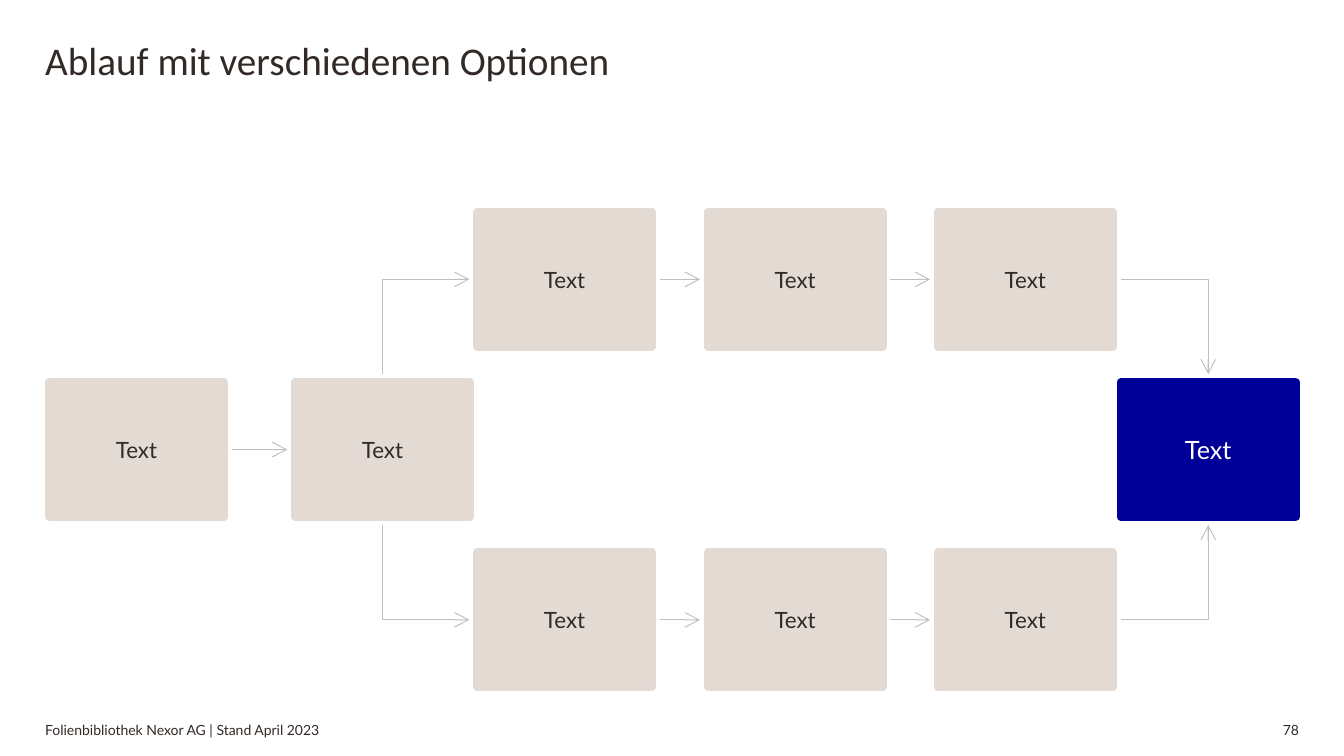
from pptx import Presentation
from pptx import util as u
from pptx.dml.color import RGBColor
from pptx.enum import shapes, text
from pptx.oxml.ns import qn
from lxml import etree

# Content
TITLE = "Ablauf mit verschiedenen Optionen"
FOOTER = "Folienbibliothek Nexor AG | Stand April 2023"
PAGE = "78"
UPPER, MIDDLE, LOWER = 0, 1, 2
STEPS = {  # name: (label, column, row)
    "start": ("Text", 0, MIDDLE),
    "fork": ("Text", 1, MIDDLE),
    "goal": ("Text", 5, MIDDLE),
    "a1": ("Text", 2, UPPER),
    "a2": ("Text", 3, UPPER),
    "a3": ("Text", 4, UPPER),
    "b1": ("Text", 2, LOWER),
    "b2": ("Text", 3, LOWER),
    "b3": ("Text", 4, LOWER),
}
FLOWS = [("start", "fork"), ("fork", "a1"), ("a1", "a2"), ("a2", "a3"), ("a3", "goal"),
         ("fork", "b1"), ("b1", "b2"), ("b2", "b3"), ("b3", "goal")]

DARK = RGBColor(0x32, 0x2A, 0x26)
SAND = RGBColor(0xE4, 0xDA, 0xD4)
BLUE = RGBColor(0x00, 0x00, 0x99)
GREY = RGBColor(0xBF, 0xBF, 0xBF)
WHITE = RGBColor(0xFF, 0xFF, 0xFF)

# Layout in cm
BOX_W, BOX_H = 4.4, 3.4
COLUMN_X = [1.24, 7.44, 12.03, 17.84, 23.64, 28.25]
ROW_Y, ROW_STEP = 5.34, 4.29
GAP = 0.2  # space between an arrow and its box

prs = Presentation()
prs.slide_width, prs.slide_height = u.Cm(33.87), u.Cm(19.05)
s = prs.slides.add_slide(prs.slide_layouts[5])


def write(sp, words, size, color, font="Lato", align=text.PP_ALIGN.LEFT,
          anchor=text.MSO_ANCHOR.MIDDLE, inset=None, wrap=True):
    tf = sp.text_frame
    tf.word_wrap = wrap
    tf.auto_size = text.MSO_AUTO_SIZE.NONE
    tf.vertical_anchor = anchor
    if inset is not None:
        tf.margin_left = tf.margin_top = tf.margin_right = tf.margin_bottom = u.Cm(inset)
    p = tf.paragraphs[0]
    p.text = words
    p.alignment = align
    p.font.size, p.font.name, p.font.color.rgb = u.Pt(size), font, color


def center(step):
    _, column, row = STEPS[step]
    return COLUMN_X[column] + BOX_W / 2, ROW_Y + row * ROW_STEP + BOX_H / 2


def route(source, target):
    """Straight along a row; otherwise one corner, upright at the middle row."""
    (x1, y1), (x2, y2) = center(source), center(target)
    out_x, in_x = x1 + BOX_W / 2 + GAP, x2 - BOX_W / 2 - GAP
    if y1 == y2:
        return [(out_x, y1), (in_x, y2)]
    reach = (BOX_H / 2 + GAP) * (1 if y2 > y1 else -1)
    if STEPS[source][2] == MIDDLE:
        return [(x1, y1 + reach), (x1, y2), (in_x, y2)]
    return [(out_x, y1), (x2, y1), (x2, y2 - reach)]


def add_arrow(points):
    pts = [(u.Cm(x), u.Cm(y)) for x, y in points]
    if len(pts) == 2:
        sp = s.shapes.add_connector(shapes.MSO_CONNECTOR.STRAIGHT, *pts[0], *pts[1])
        etree.SubElement(sp._element.spPr, qn("a:effectLst"))
    else:
        builder = s.shapes.build_freeform(*pts[0])
        builder.add_line_segments(pts[1:], close=False)
        sp = builder.convert_to_shape()
        sp.fill.background()
        sp.shadow.inherit = False
    sp.line.color.rgb, sp.line.width = GREY, u.Pt(0.75)
    etree.SubElement(sp.line._get_or_add_ln(), qn("a:tailEnd"), type="arrow", w="lg", len="lg")


# Title
title = s.shapes.title
title.left, title.top, title.width, title.height = map(u.Cm, (1.14, 0.91, 24.4, 1.4))
write(title, TITLE, 28, DARK, "Calibri", anchor=text.MSO_ANCHOR.TOP, inset=0)

# Footer and page number
for words, left, width, align, wrap in [(FOOTER, 1.14, 28.1, text.PP_ALIGN.LEFT, True),
                                        (PAGE, 31.96, 0.78, text.PP_ALIGN.RIGHT, False)]:
    box = s.shapes.add_textbox(u.Cm(left), u.Cm(18.18), u.Cm(width), u.Cm(0.42))
    write(box, words, 10, DARK, align=align, anchor=text.MSO_ANCHOR.BOTTOM, inset=0, wrap=wrap)

# Steps
for name, (label, column, row) in STEPS.items():
    fill, color, size = (BLUE, WHITE, 18) if name == "goal" else (SAND, DARK, 16)
    sp = s.shapes.add_shape(shapes.MSO_SHAPE.RECTANGLE, u.Cm(COLUMN_X[column]),
                            u.Cm(ROW_Y + row * ROW_STEP), u.Cm(BOX_W), u.Cm(BOX_H))
    sp.shadow.inherit = False
    sp.fill.solid()
    sp.fill.fore_color.rgb = sp.line.color.rgb = fill
    sp.line.width = u.Pt(6)
    etree.SubElement(sp.line._get_or_add_ln(), qn("a:round"))
    write(sp, label, size, color, align=text.PP_ALIGN.CENTER)

# Arrows
for source, target in FLOWS:
    add_arrow(route(source, target))

prs.save("out.pptx")
